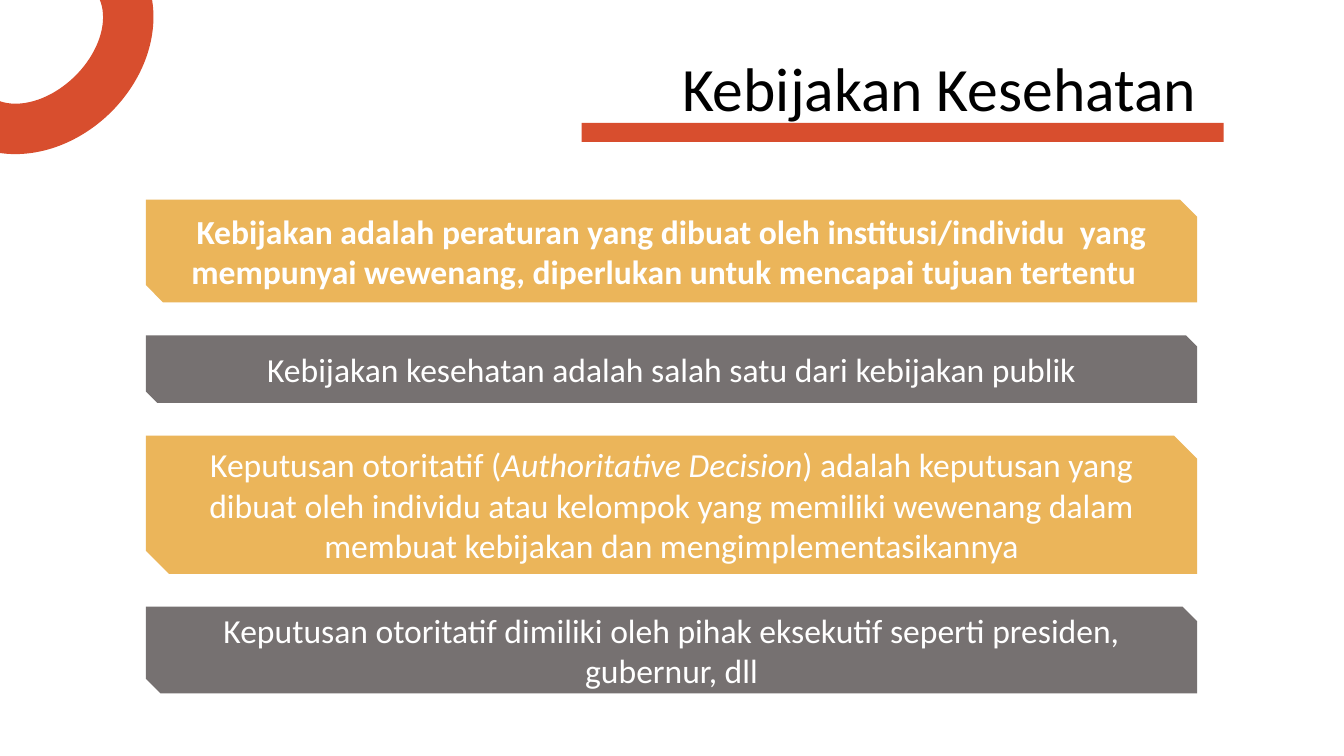
"""Build the slide on health policy: a title over a bar, an arc and four statements."""
import pptx
import pptx.util
import pptx.dml.color
import pptx.enum.shapes
import pptx.enum.text

Cm = pptx.util.Cm
Kind = pptx.enum.shapes.MSO_SHAPE
Align = pptx.enum.text.PP_ALIGN
Color = pptx.dml.color.RGBColor.from_string
colors = {"gold": "EBB55A", "gray": "767171", "red": "D84E2E",
          "white": "FFFFFF", "black": "000000"}


def write(shape, text, size=24, color="white", align=Align.CENTER,
          bold=False, slant="", space=1.0):
    """Fill a shape with one paragraph, with the slant phrase in italics."""
    frame = shape.text_frame
    frame.word_wrap = True
    frame.vertical_anchor = pptx.enum.text.MSO_ANCHOR.MIDDLE
    para = frame.paragraphs[0]
    para.alignment = align
    para.line_spacing = space
    head, mid, tail = text.partition(slant) if slant else (text, "", "")
    for part in filter(None, (head, mid, tail)):
        run = para.add_run()
        run.text = part
        run.font.name = "Calibri"
        run.font.size = pptx.util.Pt(size)
        run.font.bold = bold
        run.font.italic = part == slant
        run.font.color.rgb = Color(colors[color])


def draw(kind, left, top, width, height, color):
    """Add a flat shape without outline, measured in centimetres."""
    shape = slide.shapes.add_shape(kind, Cm(left), Cm(top), Cm(width), Cm(height))
    shape.shadow.inherit = False
    shape.fill.solid()
    shape.fill.fore_color.rgb = Color(colors[color])
    shape.line.fill.background()
    return shape


deck = pptx.Presentation()
deck.slide_width = Cm(33.87)
deck.slide_height = Cm(19.05)
slide = deck.slides.add_slide(deck.slide_layouts[6])

title = slide.shapes.add_textbox(Cm(16.94), Cm(1.02), Cm(14.3), Cm(2.59))
write(title, "Kebijakan Kesehatan", size=44, color="black",
      align=Align.JUSTIFY, space=0.9)

cards = [
    (2.59, "gold", "Kebijakan adalah peraturan yang dibuat oleh institusi/individu  yang "
     "mempunyai wewenang, diperlukan untuk mencapai tujuan tertentu  ", {"bold": True}),
    (1.7, "gray", "Kebijakan kesehatan adalah salah satu dari kebijakan publik", {}),
    (3.48, "gold", "Keputusan otoritatif (Authoritative Decision) adalah keputusan yang "
     "dibuat oleh individu atau kelompok yang memiliki wewenang dalam membuat "
     "kebijakan dan mengimplementasikannya", {"slant": "Authoritative Decision"}),
    (2.18, "gray", "Keputusan otoritatif dimiliki oleh pihak eksekutif seperti presiden, "
     "gubernur, dll", {}),
]
top, gap = 5.03, 0.83
for height, color, text, style in cards:
    card = draw(Kind.SNIP_2_DIAG_RECTANGLE, 3.68, top, 26.49, height, color)
    write(card, text, **style)
    top += height + gap

draw(Kind.RECTANGLE, 14.66, 3.1, 16.18, 0.48, "red")
arc = draw(Kind.BLOCK_ARC, -2.18, -1.55, 6.32, 5.13, "red")
arc.rotation = 135.9

deck.save("out.pptx")
